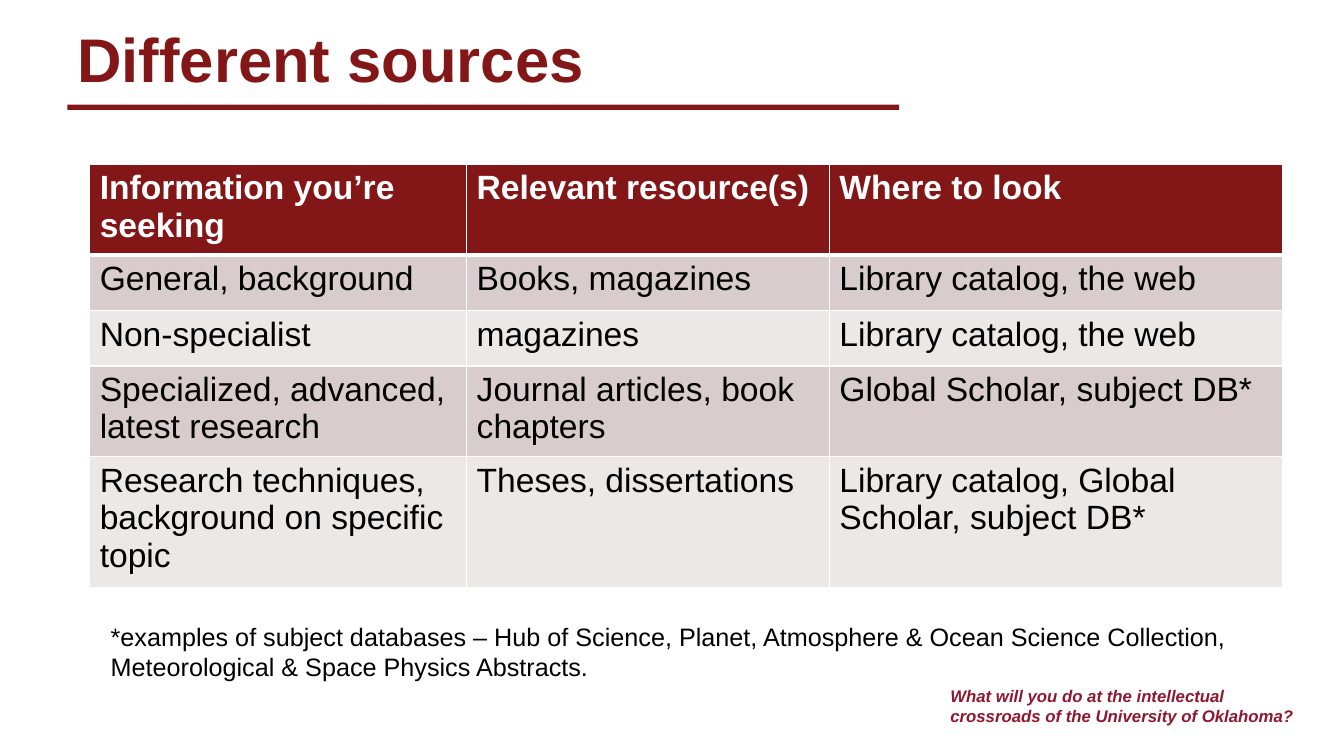
from pptx import Presentation
from pptx.dml.color import RGBColor
from pptx.enum.shapes import MSO_SHAPE
from pptx.enum.text import MSO_ANCHOR
from pptx.oxml import parse_xml
from pptx.oxml.ns import nsdecls
from pptx.util import Cm, Pt

RECTANGLE = MSO_SHAPE.RECTANGLE
TOP, MIDDLE = MSO_ANCHOR.TOP, MSO_ANCHOR.MIDDLE

# Content
TITLE = "Different sources"
HEADER = ("Information you’re seeking", "Relevant resource(s)", "Where to look")
ROWS = [
    ("General, background", "Books, magazines", "Library catalog, the web"),
    ("Non-specialist", "magazines", "Library catalog, the web"),
    ("Specialized, advanced, latest research", "Journal articles, book chapters",
     "Global Scholar, subject DB*"),
    ("Research techniques, background on specific topic", "Theses, dissertations",
     "Library catalog, Global Scholar, subject DB*"),
]
FOOTNOTE = ("*examples of subject databases – Hub of Science, Planet, Atmosphere & "
            "Ocean Science Collection, Meteorological & Space Physics Abstracts.")
MOTTO = "What will you do at the intellectual crossroads of the University of Oklahoma?"

# Formats
CRIMSON, WHITE, BLACK = "831617", "FFFFFF", "000000"
BANDS = ("D9CCCC", "EDE8E8")
TITLE_FONT = {"size": Pt(44), "bold": True, "color": CRIMSON}
HEADER_FONT = {"size": Pt(24), "bold": True, "color": WHITE}
BODY_FONT = {"size": Pt(24), "bold": False, "color": BLACK}
FOOTNOTE_FONT = {"size": Pt(18), "color": BLACK}
MOTTO_FONT = {"size": Pt(12), "bold": True, "italic": True, "color": "8E1731"}

# Layout in centimetres
TITLE_BOX = (1.7, 0.76, 20.96, 1.63)
TITLE_RULE = (1.7, 2.64, 20.96, 0.13)
FOOTNOTE_BOX = (2.54, 15.52, 29.64, 1.8)
MOTTO_BOX = (23.7, 17.15, 9.47, 1.27)
TABLE_LEFT, TABLE_TOP, ROW_HEIGHT = 2.26, 4.14, 1.4
COLUMN_WIDTHS = (9.5, 9.14, 11.43)
THIN, THICK = 1, 3


def color(value):
    return RGBColor.from_string(value)


def write(text_frame, text, font_format):
    text_frame.text = text
    paragraph = text_frame.paragraphs[0]
    font = paragraph.runs[0].font
    for name, value in {"name": "Arial", **font_format}.items():
        if name == "color":
            font.color.rgb = color(value)
        else:
            setattr(font, name, value)
    return paragraph


def add_text(slide, box, text, font_format, anchor=TOP):
    text_frame = slide.shapes.add_textbox(*map(Cm, box)).text_frame
    text_frame.word_wrap = True
    text_frame.vertical_anchor = anchor
    return write(text_frame, text, font_format)


def set_borders(cell, widths):
    properties = cell._tc.get_or_add_tcPr()
    for side, width in widths.items():
        properties.append(parse_xml(
            f'<a:ln{side} {nsdecls("a")} w="{Pt(width)}"><a:solidFill>'
            f'<a:srgbClr val="{WHITE}"/></a:solidFill></a:ln{side}>'))


def add_source_table(slide):
    rows = [HEADER, *ROWS]
    table = slide.shapes.add_table(
        len(rows), len(HEADER), Cm(TABLE_LEFT), Cm(TABLE_TOP),
        Cm(sum(COLUMN_WIDTHS)), Cm(ROW_HEIGHT * len(rows))).table
    for column, width in zip(table.columns, COLUMN_WIDTHS):
        column.width = Cm(width)
    for index, texts in enumerate(rows):
        is_header = index == 0
        fill = CRIMSON if is_header else BANDS[(index - 1) % 2]
        borders = {"L": THIN, "R": THIN,
                   "T": THICK if index == 1 else THIN,
                   "B": THICK if is_header else THIN}
        table.rows[index].height = Cm(ROW_HEIGHT)
        for cell, text in zip(table.rows[index].cells, texts):
            write(cell.text_frame, text, HEADER_FONT if is_header else BODY_FONT)
            set_borders(cell, borders)
            cell.fill.solid()
            cell.fill.fore_color.rgb = color(fill)


def main():
    presentation = Presentation()
    presentation.slide_width, presentation.slide_height = Cm(33.87), Cm(19.05)
    slide = presentation.slides.add_slide(presentation.slide_layouts[6])

    # Motto and title with its rule
    add_text(slide, MOTTO_BOX, MOTTO, MOTTO_FONT)
    rule = slide.shapes.add_shape(RECTANGLE, *map(Cm, TITLE_RULE))
    rule.shadow.inherit = False
    rule.fill.solid()
    rule.fill.fore_color.rgb = color(CRIMSON)
    rule.line.fill.background()
    add_text(slide, TITLE_BOX, TITLE, TITLE_FONT, MIDDLE).line_spacing = 0.9

    # Table and footnote
    add_source_table(slide)
    add_text(slide, FOOTNOTE_BOX, FOOTNOTE, FOOTNOTE_FONT)

    presentation.save("out.pptx")


if __name__ == "__main__":
    main()
